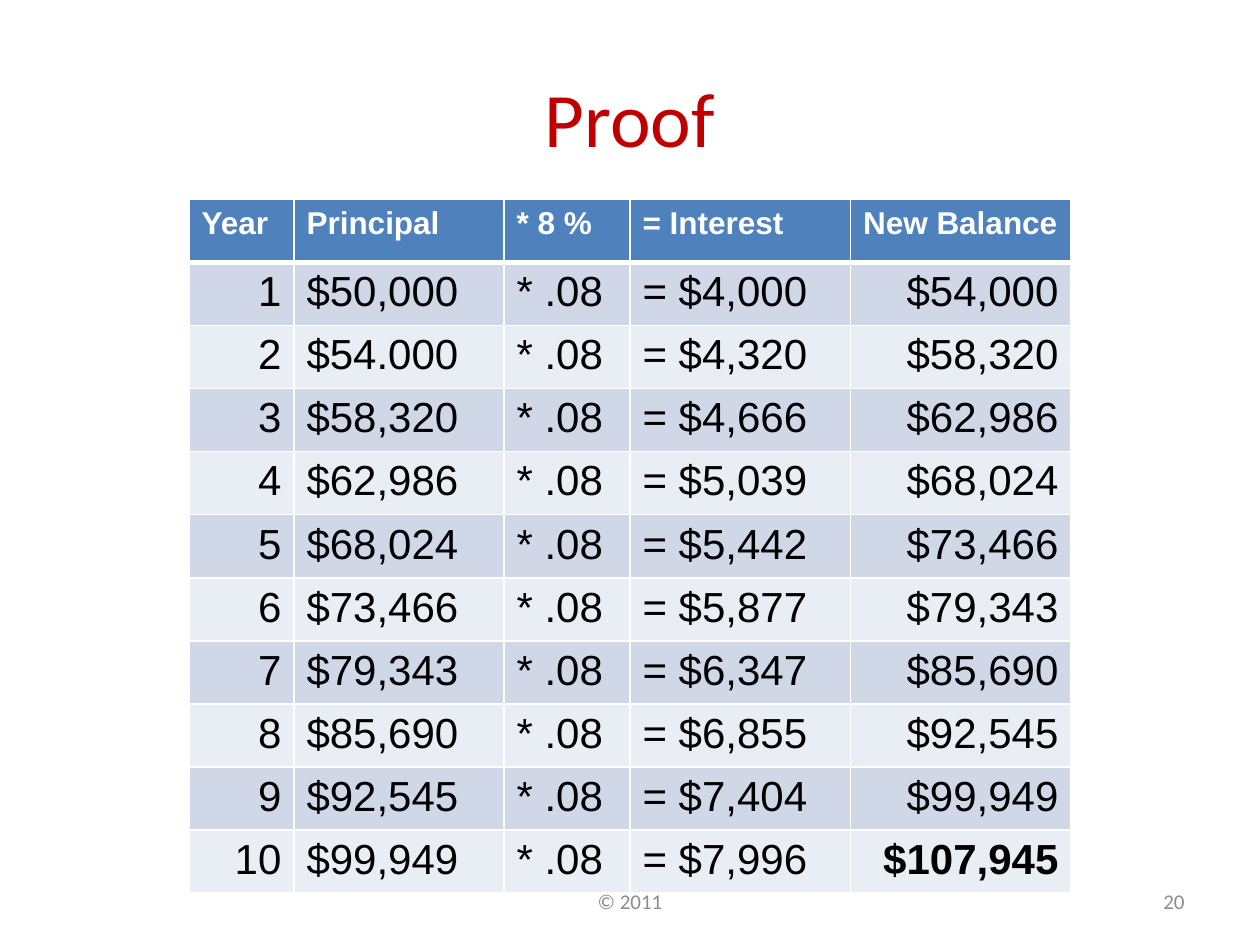
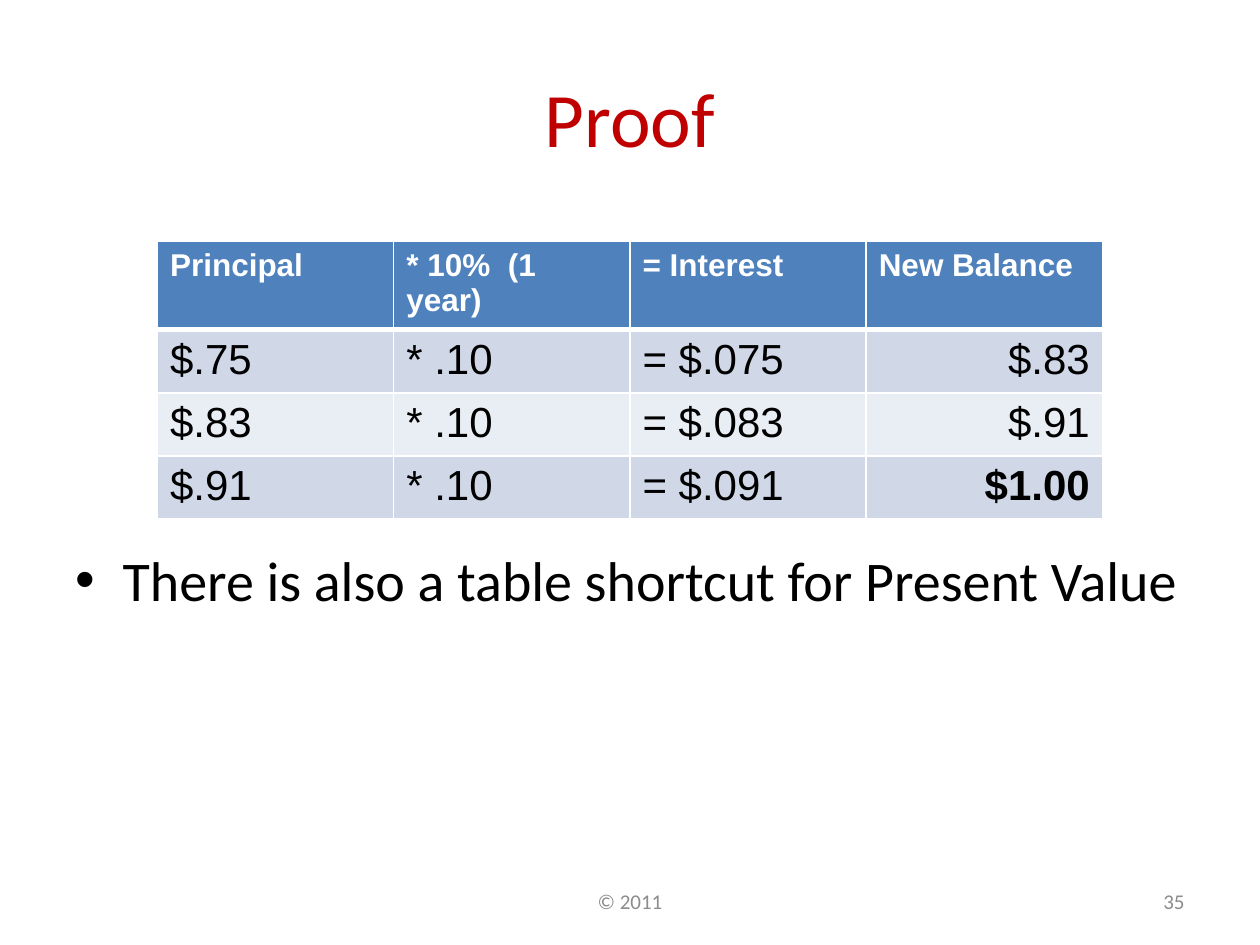
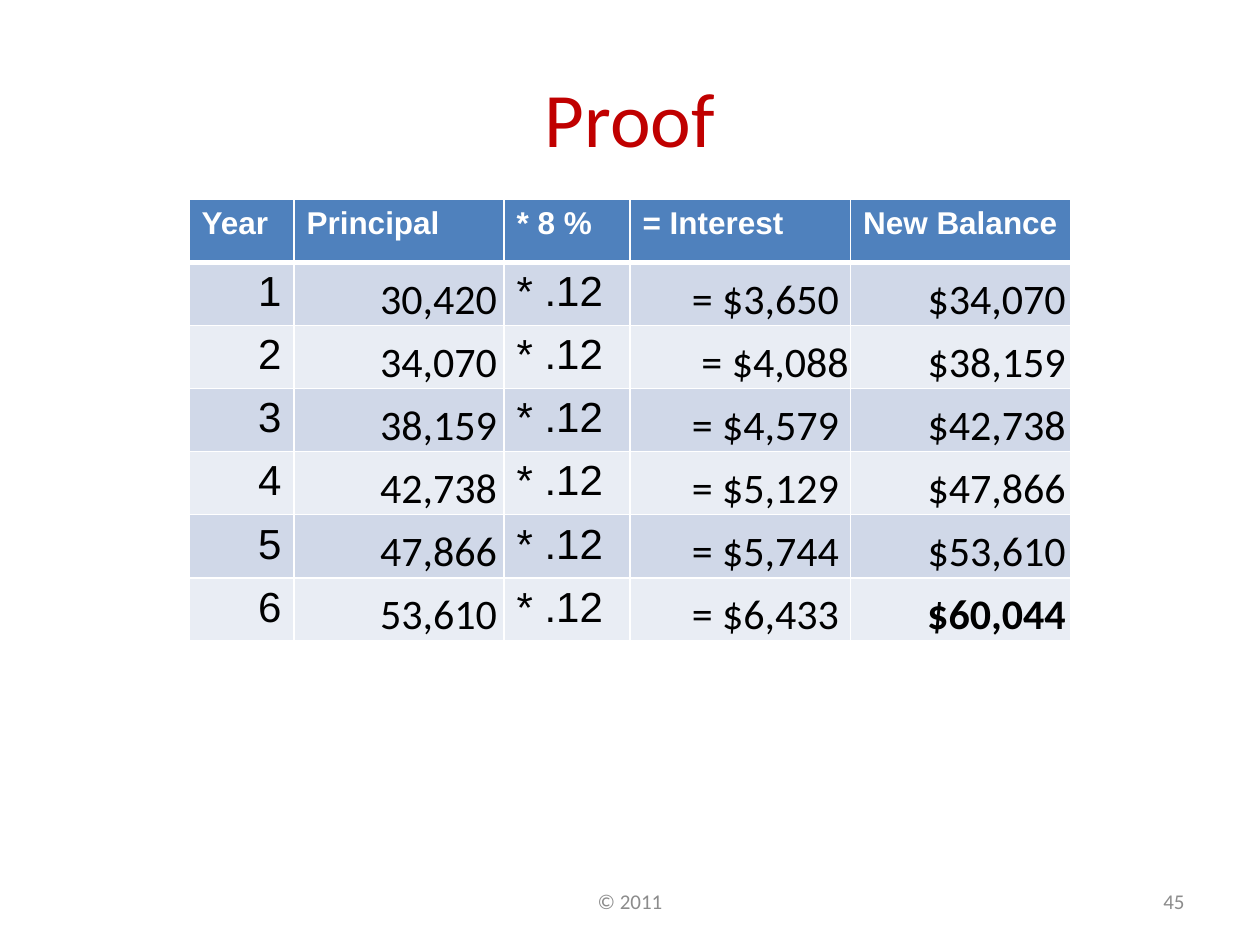
"""Build three proof slides showing how balances grow with yearly interest."""
from lxml import etree
from pptx import Presentation
from pptx.dml.color import RGBColor
from pptx.enum.text import MSO_ANCHOR, PP_ALIGN
from pptx.oxml.ns import qn
from pptx.util import Pt

RED = RGBColor(0xC0, 0x00, 0x00)
BLUE = RGBColor(0x4F, 0x81, 0xBD)
BANDS = [RGBColor(0xD0, 0xD8, 0xE8), RGBColor(0xE9, 0xED, 0xF4)]
GRAY = RGBColor(0x8C, 0x8C, 0x8C)
BLACK = RGBColor(0x00, 0x00, 0x00)
WHITE = RGBColor(0xFF, 0xFF, 0xFF)

ROW_HEIGHT = 36
YEAR_WIDTHS = [60, 120, 72, 126, 126]
YEAR_HEADS = ["Year", "Principal", "* 8 %", "= Interest", "New Balance"]

LEFT = ("Arial", PP_ALIGN.LEFT, None)
RIGHT = ("Arial", PP_ALIGN.RIGHT, None)
PRINCIPAL = ("Calibri", PP_ALIGN.RIGHT, 4)
INTEREST = ("Calibri", PP_ALIGN.RIGHT, 6.5)
BALANCE = ("Calibri", PP_ALIGN.RIGHT, 3)
WIDE_INTEREST = "= $4,088"

growth = [
    ("$50,000", "= $4,000", "$54,000"),
    ("$54.000", "= $4,320", "$58,320"),
    ("$58,320", "= $4,666", "$62,986"),
    ("$62,986", "= $5,039", "$68,024"),
    ("$68,024", "= $5,442", "$73,466"),
    ("$73,466", "= $5,877", "$79,343"),
    ("$79,343", "= $6,347", "$85,690"),
    ("$85,690", "= $6,855", "$92,545"),
    ("$92,545", "= $7,404", "$99,949"),
    ("$99,949", "= $7,996", "$107,945"),
]
cents = [
    ("$.75", "= $.075", "$.83"),
    ("$.83", "= $.083", "$.91"),
    ("$.91", "= $.091", "$1.00"),
]
savings = [
    ("30,420", "= $3,650", "$34,070"),
    ("34,070", WIDE_INTEREST, "$38,159"),
    ("38,159", "= $4,579", "$42,738"),
    ("42,738", "= $5,129", "$47,866"),
    ("47,866", "= $5,744", "$53,610"),
    ("53,610", "= $6,433", "$60,044"),
]

proofs = [
    {"number": "20", "left": 108, "top": 114, "widths": YEAR_WIDTHS, "heads": YEAR_HEADS,
     "formats": [RIGHT, LEFT, LEFT, LEFT, RIGHT], "note": None,
     "rows": [(str(year), start, "* .08", gain, end)
              for year, (start, gain, end) in enumerate(growth, 1)]},
    {"number": "35", "left": 90, "top": 138, "widths": [135] * 4,
     "heads": ["Principal", "* 10%  (1 year)", "= Interest", "New Balance"],
     "formats": [LEFT, LEFT, LEFT, RIGHT],
     "note": "There is also a table shortcut for Present Value",
     "rows": [(start, "* .10", gain, end) for start, gain, end in cents]},
    {"number": "45", "left": 108, "top": 114, "widths": YEAR_WIDTHS, "heads": YEAR_HEADS,
     "formats": [RIGHT, PRINCIPAL, LEFT, INTEREST, BALANCE], "note": None,
     "rows": [(str(year), start, "* .12", gain, end)
              for year, (start, gain, end) in enumerate(savings, 1)]},
]


def write(frame, words, size, color, align, font="Calibri", bold=False):
    para = frame.paragraphs[0]
    para.alignment = align
    span = para.add_run()
    span.text = words
    span.font.name = font
    span.font.size = Pt(size)
    span.font.bold = bold
    span.font.color.rgb = color
    return para


def add_text(page, place, words, size, color, align, anchor=MSO_ANCHOR.MIDDLE):
    frame = page.shapes.add_textbox(*map(Pt, place)).text_frame
    frame.word_wrap = True
    frame.vertical_anchor = anchor
    return frame, write(frame, words, size, color, align)


deck = Presentation()
deck.slide_width, deck.slide_height = Pt(720), Pt(540)

for proof in proofs:
    page = deck.slides.add_slide(deck.slide_layouts[6])
    add_text(page, (36, 21.6, 648, 90), "Proof", 44, RED, PP_ALIGN.CENTER)

    if proof["note"]:
        frame, para = add_text(page, (36, 126, 648, 356.4), proof["note"], 32, BLACK,
                               PP_ALIGN.LEFT, MSO_ANCHOR.TOP)
        frame.margin_top = Pt(185.5)
        props = para._p.get_or_add_pPr()
        props.set("marL", str(Pt(27)))
        props.set("indent", str(-Pt(27)))
        etree.SubElement(props, qn("a:buFont"), typeface="Arial")
        etree.SubElement(props, qn("a:buChar"), char="•")

    rows = [proof["heads"]] + proof["rows"]
    widths = proof["widths"]
    table = page.shapes.add_table(
        len(rows), len(widths), Pt(proof["left"]), Pt(proof["top"]),
        Pt(sum(widths)), Pt(ROW_HEIGHT * len(rows))).table
    for column, width in zip(table.columns, widths):
        column.width = Pt(width)

    for r, row in enumerate(rows):
        table.rows[r].height = Pt(ROW_HEIGHT)
        for c, words in enumerate(row):
            cell = table.cell(r, c)
            props = cell._tc.get_or_add_tcPr()
            thick_side = {0: "lnB", 1: "lnT"}.get(r)
            for side in ("lnL", "lnR", "lnT", "lnB"):
                weight = 3 if side == thick_side else 1
                line = etree.SubElement(props, qn(f"a:{side}"), w=str(Pt(weight)))
                paint = etree.SubElement(line, qn("a:solidFill"))
                etree.SubElement(paint, qn("a:srgbClr"), val=str(WHITE))
            cell.fill.solid()
            if r == 0:
                cell.fill.fore_color.rgb = BLUE
                write(cell.text_frame, words, 18, WHITE, PP_ALIGN.LEFT, "Arial", True)
                continue
            cell.fill.fore_color.rgb = BANDS[(r - 1) % 2]
            font, align, inset = proof["formats"][c]
            if inset:
                cell.vertical_anchor = MSO_ANCHOR.BOTTOM
                cell.margin_left = cell.margin_top = Pt(0.75)
                cell.margin_bottom = Pt(0)
                cell.margin_right = Pt(1 if words == WIDE_INTEREST else inset)
            is_result = r == len(rows) - 1 and c == len(row) - 1
            write(cell.text_frame, words, 24, BLACK, align, font, is_result)

    add_text(page, (246, 500.5, 228, 28.75), "© 2011", 12, GRAY, PP_ALIGN.CENTER)
    add_text(page, (516, 500.5, 168, 28.75), proof["number"], 12, GRAY, PP_ALIGN.RIGHT)

deck.save("out.pptx")
